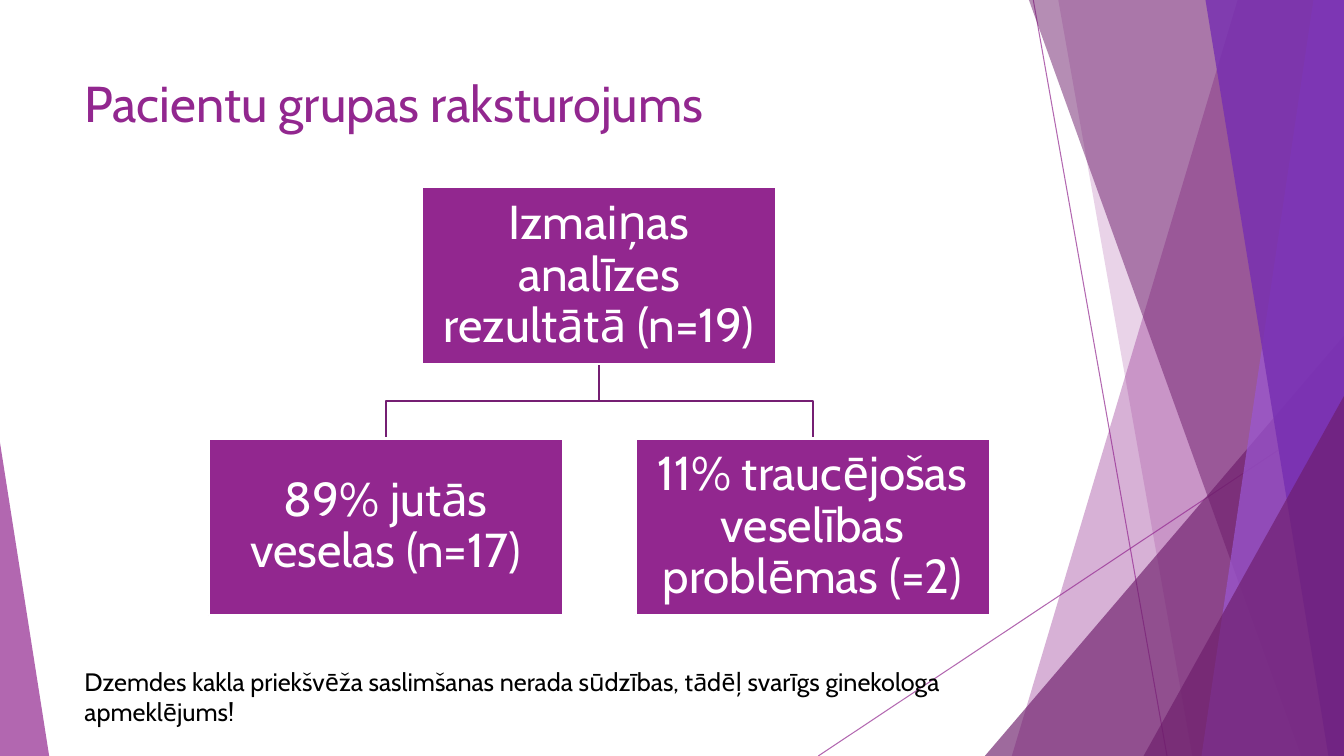
"""Build the slide describing the patient group as a two-branch hierarchy."""
from dataclasses import dataclass
from typing import Optional, Union

from lxml.etree import SubElement
from pptx import Presentation
from pptx.dml.color import RGBColor
from pptx.enum.shapes import MSO_CONNECTOR, MSO_SHAPE
from pptx.enum.text import MSO_ANCHOR, MSO_AUTO_SIZE, PP_ALIGN
from pptx.oxml.ns import qn
from pptx.shapes.autoshape import Shape
from pptx.shapes.shapetree import SlideShapes
from pptx.text.text import TextFrame
from pptx.util import Cm, Pt

SLIDE_WIDTH, SLIDE_HEIGHT = 33.87, 19.05
Point = tuple[float, float]


@dataclass(frozen=True)
class Theme:
    font: str = "Cabin"
    purple: str = "92278F"
    plum: str = "6D1D6B"
    branch: str = "751F73"
    lilac: str = "9B57D3"
    violet: str = "762EB1"
    white: str = "FFFFFF"
    black: str = "000000"
    title_size: int = 36
    box_size: int = 34
    note_size: int = 18
    hairline: float = 0.75
    outline: float = 1.5


@dataclass(frozen=True)
class Ray:
    start: Point
    end: Point


@dataclass(frozen=True)
class Facet:
    top_left: float
    bottom_left: float
    color: str
    alpha: int


@dataclass(frozen=True)
class Wedge:
    left: float
    top: float
    width: float
    apex: float
    color: str
    alpha: int


@dataclass(frozen=True)
class Group:
    text: str
    left: float
    top: float


THEME = Theme()
BOX_WIDTH, BOX_HEIGHT = 8.92, 4.45
ROOT_LEFT, ROOT_TOP = 10.64, 4.72
BRANCH_SHIFT, CHILD_TOP = 5.38, 11.05

RAYS = [Ray((26.04, 0), (29.41, SLIDE_HEIGHT)), Ray((SLIDE_WIDTH, 10.24), (20.62, SLIDE_HEIGHT))]
BACKDROP: list[Union[Facet, Wedge]] = [
    Facet(31.19, 25.5, THEME.purple, 36),
    Facet(26.67, 30.05, THEME.purple, 20),
    Wedge(24.82, 8.46, 9.05, 1, THEME.plum, 66),
    Facet(25.93, 32.79, THEME.plum, 50),
    Facet(33.1, 30.28, THEME.lilac, 70),
    Facet(30.38, 33.48, THEME.violet, 80),
    Wedge(28.82, 9.98, 5.05, 1, THEME.plum, 66),
    Wedge(0, 11.15, 1.24, 0, THEME.purple, 70),
]
ROOT = Group("Izmaiņas analīzes rezultātā (n=19)", ROOT_LEFT, ROOT_TOP)
CHILDREN = [
    Group("89% jutās veselas (n=17)", ROOT_LEFT - BRANCH_SHIFT, CHILD_TOP),
    Group("11% traucējošas veselības problēmas (=2)", ROOT_LEFT + BRANCH_SHIFT, CHILD_TOP),
]


def set_alpha(owner, percent: int) -> None:
    for color in owner.iter(qn("a:srgbClr")):
        SubElement(color, qn("a:alpha"), val=str(percent * 1000))


def paint(shape: Shape, fill: Optional[str] = None, line: Optional[str] = None,
          alpha: int = 100) -> None:
    shape.shadow.inherit = False
    if fill:
        shape.fill.solid()
        shape.fill.fore_color.rgb = RGBColor.from_string(fill)
    else:
        shape.fill.background()
    if line:
        shape.line.color.rgb = RGBColor.from_string(line)
        shape.line.width = Pt(THEME.outline)
    else:
        shape.line.fill.background()
    if alpha < 100:
        set_alpha(shape.element.spPr, alpha)


def write(frame: TextFrame, text: str, *, size: int, color: str,
          align: PP_ALIGN = PP_ALIGN.LEFT, anchor: MSO_ANCHOR = MSO_ANCHOR.TOP,
          inset: Optional[float] = None, spacing: Optional[float] = None) -> None:
    frame.word_wrap = True
    frame.auto_size = MSO_AUTO_SIZE.NONE
    frame.vertical_anchor = anchor
    if inset is not None:
        frame.margin_left = frame.margin_right = Cm(inset)
        frame.margin_top = frame.margin_bottom = Cm(inset)
    paragraph = frame.paragraphs[0]
    paragraph.alignment = align
    paragraph.line_spacing = spacing
    run = paragraph.add_run()
    run.text = text
    run.font.name = THEME.font
    run.font.size = Pt(size)
    run.font.color.rgb = RGBColor.from_string(color)


def draw_outline(shapes: SlideShapes, points: list[Point], close: bool) -> Shape:
    start, *rest = [(Cm(x), Cm(y)) for x, y in points]
    builder = shapes.build_freeform(*start)
    builder.add_line_segments(rest, close=close)
    return builder.convert_to_shape()


def draw_ray(shapes: SlideShapes, ray: Ray) -> None:
    ends = [Cm(value) for value in ray.start + ray.end]
    connector = shapes.add_connector(MSO_CONNECTOR.STRAIGHT, *ends)
    connector.line.color.rgb = RGBColor.from_string(THEME.purple)
    connector.line.width = Pt(THEME.hairline)
    properties = connector.element.spPr
    set_alpha(properties, 70)
    SubElement(properties, qn("a:effectLst"))


def draw_backdrop_part(shapes: SlideShapes, part: Union[Facet, Wedge]) -> None:
    if isinstance(part, Facet):
        corners = [(part.top_left, 0), (SLIDE_WIDTH, 0),
                   (SLIDE_WIDTH, SLIDE_HEIGHT), (part.bottom_left, SLIDE_HEIGHT)]
        shape = draw_outline(shapes, corners, close=True)
    else:
        shape = shapes.add_shape(MSO_SHAPE.ISOSCELES_TRIANGLE, Cm(part.left), Cm(part.top),
                                 Cm(part.width), Cm(SLIDE_HEIGHT - part.top))
        shape.adjustments[0] = part.apex
    paint(shape, fill=part.color, alpha=part.alpha)


def draw_branch(shapes: SlideShapes, parent: Group, child: Group) -> None:
    parent_x, child_x = (group.left + BOX_WIDTH / 2 for group in (parent, child))
    bottom = parent.top + BOX_HEIGHT
    middle = (bottom + child.top) / 2
    route = [(parent_x, bottom), (parent_x, middle), (child_x, middle), (child_x, child.top)]
    paint(draw_outline(shapes, route, close=False), line=THEME.branch)


def draw_group(shapes: SlideShapes, group: Group) -> None:
    box = shapes.add_shape(MSO_SHAPE.RECTANGLE, Cm(group.left), Cm(group.top),
                           Cm(BOX_WIDTH), Cm(BOX_HEIGHT))
    paint(box, fill=THEME.purple, line=THEME.white)
    write(box.text_frame, group.text, size=THEME.box_size, color=THEME.white,
          align=PP_ALIGN.CENTER, anchor=MSO_ANCHOR.MIDDLE, inset=0.05, spacing=0.9)


def main() -> None:
    presentation = Presentation()
    presentation.slide_width, presentation.slide_height = Cm(SLIDE_WIDTH), Cm(SLIDE_HEIGHT)
    slide = presentation.slides.add_slide(presentation.slide_layouts[5])
    shapes = slide.shapes
    for ray in RAYS:
        draw_ray(shapes, ray)
    for part in BACKDROP:
        draw_backdrop_part(shapes, part)

    title = shapes.title
    title.left, title.top, title.width, title.height = Cm(1.88), Cm(1.7), Cm(23.88), Cm(3.66)
    write(title.text_frame, "Pacientu grupas raksturojums",
          size=THEME.title_size, color=THEME.purple)

    for child in CHILDREN:
        draw_branch(shapes, ROOT, child)
    for group in [ROOT, *CHILDREN]:
        draw_group(shapes, group)

    conclusion = shapes.add_textbox(Cm(1.88), Cm(16.66), Cm(22.07), Cm(1.8))
    write(conclusion.text_frame, "Dzemdes kakla priekšvēža saslimšanas nerada sūdzības, "
          "tādēļ svarīgs ginekologa apmeklējums!", size=THEME.note_size, color=THEME.black)
    presentation.save("out.pptx")


if __name__ == "__main__":
    main()
